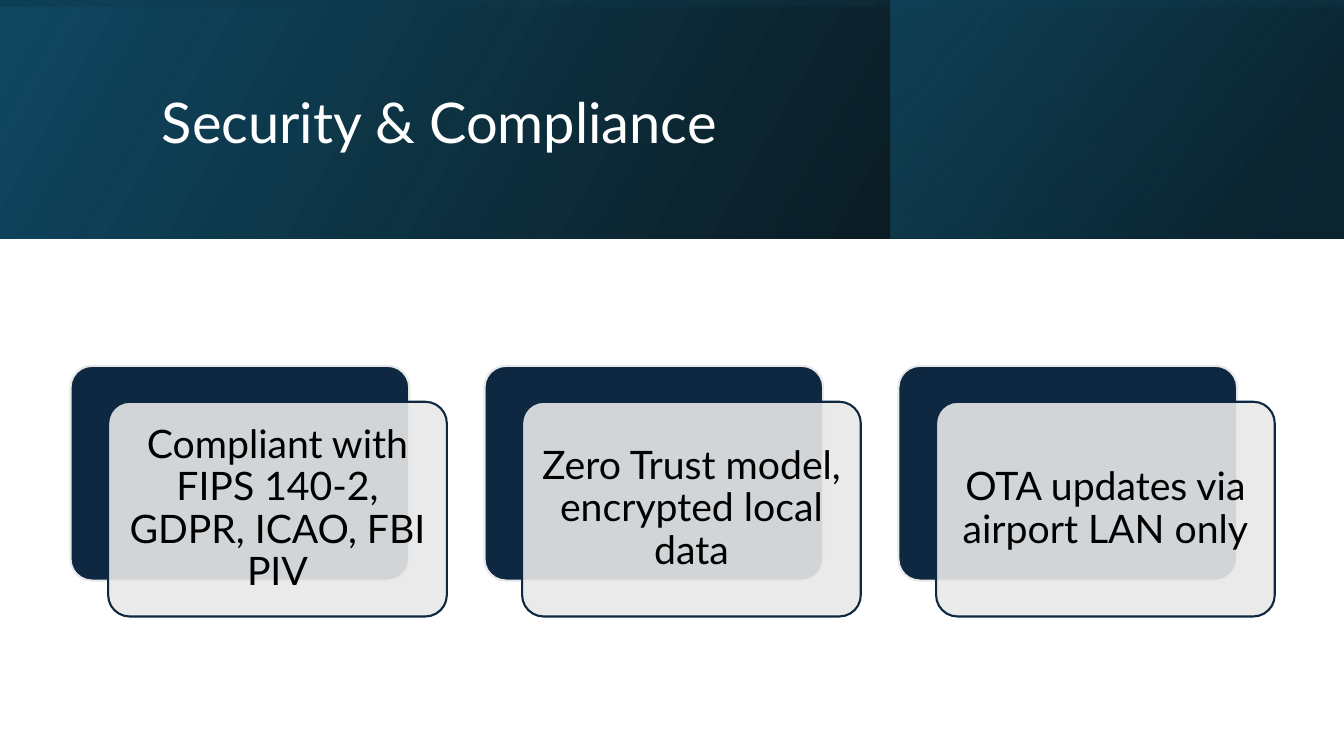
from lxml import etree
from pptx import Presentation
from pptx.dml.color import RGBColor
from pptx.enum.shapes import MSO_SHAPE
from pptx.enum.text import MSO_ANCHOR, MSO_AUTO_SIZE, PP_ALIGN
from pptx.oxml.ns import qn
from pptx.util import Inches, Pt

RECT, ROUND = MSO_SHAPE.RECTANGLE, MSO_SHAPE.ROUNDED_RECTANGLE
MIDDLE, LEFT, CENTER = MSO_ANCHOR.MIDDLE, PP_ALIGN.LEFT, PP_ALIGN.CENTER
NO_FIT = MSO_AUTO_SIZE.NONE

WIDE, HIGH = Inches(13.333), Inches(7.5)
FONT = "Lato"
HEX = {
    "black": "000000", "white": "FFFFFF", "navy": "0E2841", "gray": "E8E8E8",
    "deep": "0B3041", "blue": "104862", "teal": "156082",
}

# Percent of the slide's width or height
BAND = 31.6
SPLIT = 66.3
CARD_X, CARD_Y, CARD_W, CARD_H = 5.25, 48.4, 25.2, 28.4
STEP, SHIFT_X, SHIFT_Y = 30.8, 2.8, 4.75

CARDS = [
    "Compliant with FIPS 140-2, GDPR, ICAO, FBI PIV",
    "Zero Trust model, encrypted local data",
    "OTA updates via airport LAN only",
]


def color(name):
    return RGBColor.from_string(HEX[name])


def box(x, y, w, h):
    """Turn percentages of the slide into lengths."""
    return [round(part * side / 100)
            for part, side in zip((x, y, w, h), (WIDE, HIGH, WIDE, HIGH))]


def write(shape, text, size=28, ink="black", align=CENTER, inset=0.12):
    frame = shape.text_frame
    frame.word_wrap = True
    frame.auto_size = NO_FIT
    frame.vertical_anchor = MIDDLE
    frame.margin_left = frame.margin_right = Inches(inset)
    frame.margin_top = frame.margin_bottom = Inches(inset)
    para = frame.paragraphs[0]
    para.alignment = align
    para.line_spacing = 0.9
    run = para.add_run()
    run.text = text
    run.font.name = FONT
    run.font.size = Pt(size)
    run.font.color.rgb = color(ink)


def fade(node, alpha):
    """Set the opacity of a colour element, in percent."""
    etree.SubElement(node, qn("a:alpha"), val=str(alpha * 1000))


def band(slide, area, stops, angle, turned=False):
    """Draw a mirrored strip with a see-through gradient."""
    x, y, w, h = box(*area)
    if turned:
        x, y, w, h = x + (w - h) // 2, y + (h - w) // 2, h, w
    strip = slide.shapes.add_shape(RECT, x, y, w, h)
    strip.shadow.inherit = False
    strip.line.fill.background()
    strip.rotation = 270 if turned else 0
    props = strip.element.spPr
    props.find(qn("a:xfrm")).set("flipH", "1")

    grad = etree.Element(qn("a:gradFill"), rotWithShape="1")
    items = etree.SubElement(grad, qn("a:gsLst"))
    for pos, name, alpha in stops:
        stop = etree.SubElement(items, qn("a:gs"), pos=str(pos * 1000))
        fade(etree.SubElement(stop, qn("a:srgbClr"), val=HEX[name]), alpha)
    etree.SubElement(grad, qn("a:lin"), ang=str(angle * 60000), scaled="0")
    props.find(qn("a:prstGeom")).addnext(grad)


def panel(slide, x, y, fill, line, alpha=100):
    shape = slide.shapes.add_shape(ROUND, *box(x, y, CARD_W, CARD_H))
    shape.shadow.inherit = False
    shape.adjustments[0] = 0.1
    shape.fill.solid()
    shape.fill.fore_color.rgb = color(fill)
    shape.line.color.rgb = color(line)
    shape.line.width = Pt(1.5)
    if alpha < 100:
        fade(shape.element.spPr.find(qn("a:solidFill"))[0], alpha)
    return shape


def card(slide, index, text):
    x = CARD_X + index * STEP
    panel(slide, x, CARD_Y, "navy", "gray")
    front = panel(slide, x + SHIFT_X, CARD_Y + SHIFT_Y, "gray", "navy", 90)
    write(front, text)


def head(slide, text):
    title = slide.shapes.title
    title.left, title.top, title.width, title.height = box(11.3, 5.1, 79.7, 22.9)
    write(title, text, size=40, ink="white", align=LEFT, inset=0.1)
    # Bring the title in front of the bands
    title.element.getparent().append(title.element)


def main():
    deck = Presentation()
    deck.slide_width, deck.slide_height = WIDE, HIGH
    slide = deck.slides.add_slide(deck.slide_layouts[5])

    # Header
    full = (0, 0, 100, BAND)
    band(slide, full, [(0, "black", 96), (100, "blue", 100)], 330)
    band(slide, (SPLIT, 0, 100 - SPLIT, BAND),
         [(19, "deep", 68), (100, "teal", 48)], 320)
    band(slide, full, [(23, "blue", 16), (99, "black", 45)], 350, turned=True)
    head(slide, "Security & Compliance")

    # Cards
    for index, text in enumerate(CARDS):
        card(slide, index, text)

    deck.save("out.pptx")


if __name__ == "__main__":
    main()
